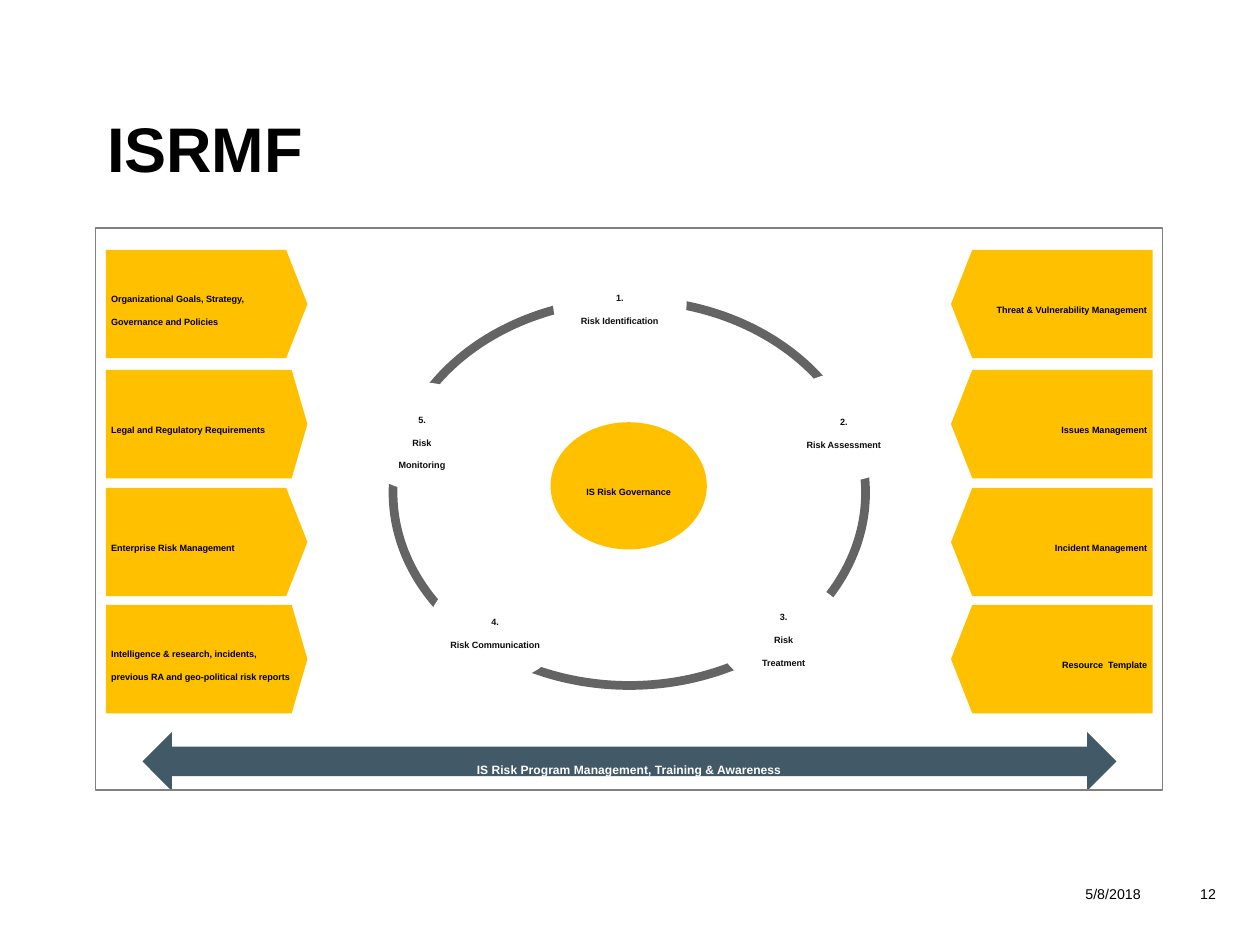
import pptx
import pptx.dml.color
import pptx.enum.shapes
import pptx.enum.text
import pptx.util

Pt = pptx.util.Pt
SHAPE = pptx.enum.shapes.MSO_SHAPE
ALIGN = pptx.enum.text.PP_ALIGN
ANCHOR = pptx.enum.text.MSO_ANCHOR

AMBER, SLATE, GREY = "FFC000", "425968", "646464"
BLACK, INK, WHITE, FRAME = "000000", "0D0D0D", "FFFFFF", "808080"
LOWERED = "-33000"  # subscript offset, in thousandths of a percent


def rgb(value):
    return pptx.dml.color.RGBColor.from_string(value)


def write(tf, text, size=9, color=BLACK, bold=True, align=ALIGN.LEFT,
          anchor=ANCHOR.MIDDLE, inset=None, wrap=True, after=None, lowered=True):
    """Fill a text frame, one paragraph per line of text."""
    tf.word_wrap = wrap
    tf.vertical_anchor = anchor
    if inset is not None:
        tf.margin_left = tf.margin_right = Pt(inset)
        tf.margin_top = tf.margin_bottom = Pt(inset)
    for i, line in enumerate(text.split("\n")):
        p = tf.add_paragraph() if i else tf.paragraphs[0]
        p.alignment = align
        if after is not None:
            p.space_after = Pt(after)
        r = p.add_run()
        r.text = line
        r.font.name = "Arial"
        r.font.size = Pt(size)
        r.font.bold = bold
        r.font.color.rgb = rgb(color)
        if lowered:
            r.font._element.set("baseline", LOWERED)


class SlideBuilder:
    def __init__(self, slide):
        self.s = slide

    def title(self, text, x, y, w, h):
        sp = self.s.shapes.title
        sp.left, sp.top, sp.width, sp.height = Pt(x), Pt(y), Pt(w), Pt(h)
        write(sp.text_frame, text, size=36, lowered=False)

    def text(self, text, x, y, w, h, **style):
        sp = self.s.shapes.add_textbox(Pt(x), Pt(y), Pt(w), Pt(h))
        write(sp.text_frame, text, **style)

    def shape(self, kind, x, y, w, h, fill=None, line=None, width=0.75):
        sp = self.s.shapes.add_shape(kind, Pt(x), Pt(y), Pt(w), Pt(h))
        sp.shadow.inherit = False
        if fill:
            sp.fill.solid()
            sp.fill.fore_color.rgb = rgb(fill)
        else:
            sp.fill.background()
        if line:
            sp.line.color.rgb = rgb(line)
            sp.line.width = Pt(width)
        else:
            sp.line.fill.background()
        return sp

    def plate(self, text, x, y, point, flip=False):
        """Pentagon that points to the cycle; flip makes it point left."""
        sp = self.shape(SHAPE.PENTAGON, x, y, 115.2, 61.9, fill=AMBER)
        sp.adjustments[0] = point
        if flip:
            sp._element.spPr.xfrm.set("flipH", "1")
        write(sp.text_frame, text, inset=3, after=2.6,
              align=ALIGN.RIGHT if flip else ALIGN.LEFT)

    def oval(self, text, cx, cy, w, h, fill, color):
        sp = self.shape(SHAPE.OVAL, cx - w / 2, cy - h / 2, w, h, fill=fill)
        write(sp.text_frame, text, color=color, align=ALIGN.CENTER,
              inset=3.6, wrap=False)


def main():
    prs = pptx.Presentation()
    prs.slide_width, prs.slide_height = Pt(720), Pt(540)
    b = SlideBuilder(prs.slides.add_slide(prs.slide_layouts[5]))

    footer = dict(size=14, bold=False, anchor=ANCHOR.TOP)
    b.text("5/8/2018", 570.2, 491.8, 131.8, 36, align=ALIGN.CENTER, **footer)
    b.text("12", 666, 491.8, 36, 36, align=ALIGN.RIGHT, **footer)
    b.title("ISRMF", 54, 30, 612, 108)

    bar = b.shape(SHAPE.LEFT_RIGHT_ARROW, 81.4, 418.3, 556.6, 33.6, fill=SLATE)
    write(bar.text_frame, "IS Risk Program Management, Training & Awareness",
          size=12, color=WHITE, align=ALIGN.CENTER, inset=4.3, wrap=False)
    b.shape(SHAPE.RECTANGLE, 54.7, 130.3, 609.8, 321.1, line=FRAME)

    row_tops = (142.8, 211.4, 278.8, 345.7)
    inputs = (
        ("Organizational Goals, Strategy, Governance and Policies", 0.196),
        ("Legal and Regulatory Requirements", 0.145),
        ("Enterprise Risk Management", 0.196),
        ("Intelligence & research, incidents, previous RA and "
         "geo-political risk reports", 0.145),
    )
    outputs = ("Threat & Vulnerability Management", "Issues Management",
               "Incident Management", "Resource  Template")
    for y, (text, point) in zip(row_tops, inputs):
        b.plate(text, 60.5, y, point)
    for y, text in zip(row_tops, outputs):
        b.plate(text, 543.5, y, 0.196, flip=True)

    b.oval("IS Risk Governance", 359.3, 277.6, 89.3, 72.7, AMBER, BLACK)
    b.shape(SHAPE.FLOWCHART_CONNECTOR, 224.6, 171.4, 270, 220.3,
            line=GREY, width=5)
    steps = (
        ("1.\nRisk Identification", 354.2, 173.5),
        ("2.\nRisk Assessment", 482.2, 244.1),
        ("3.\nRisk\nTreatment", 447.8, 362.2),
        ("4.\nRisk Communication", 283, 358.6),
        ("5.\nRisk\nMonitoring", 241.2, 249.5),
    )
    for text, cx, cy in steps:
        b.oval(text, cx, cy, 76.3, 61.9, WHITE, INK)

    prs.save("out.pptx")


if __name__ == "__main__":
    main()
